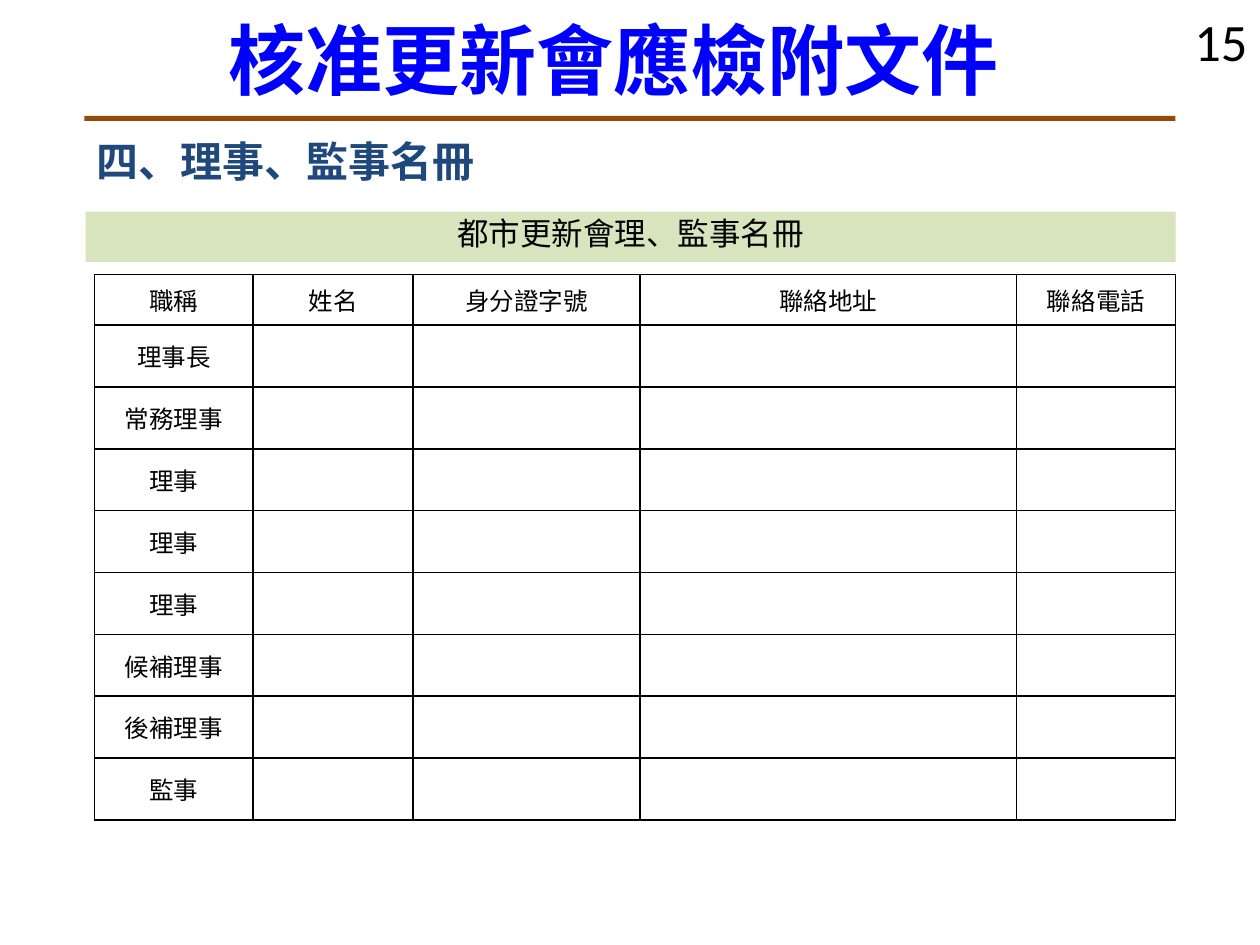
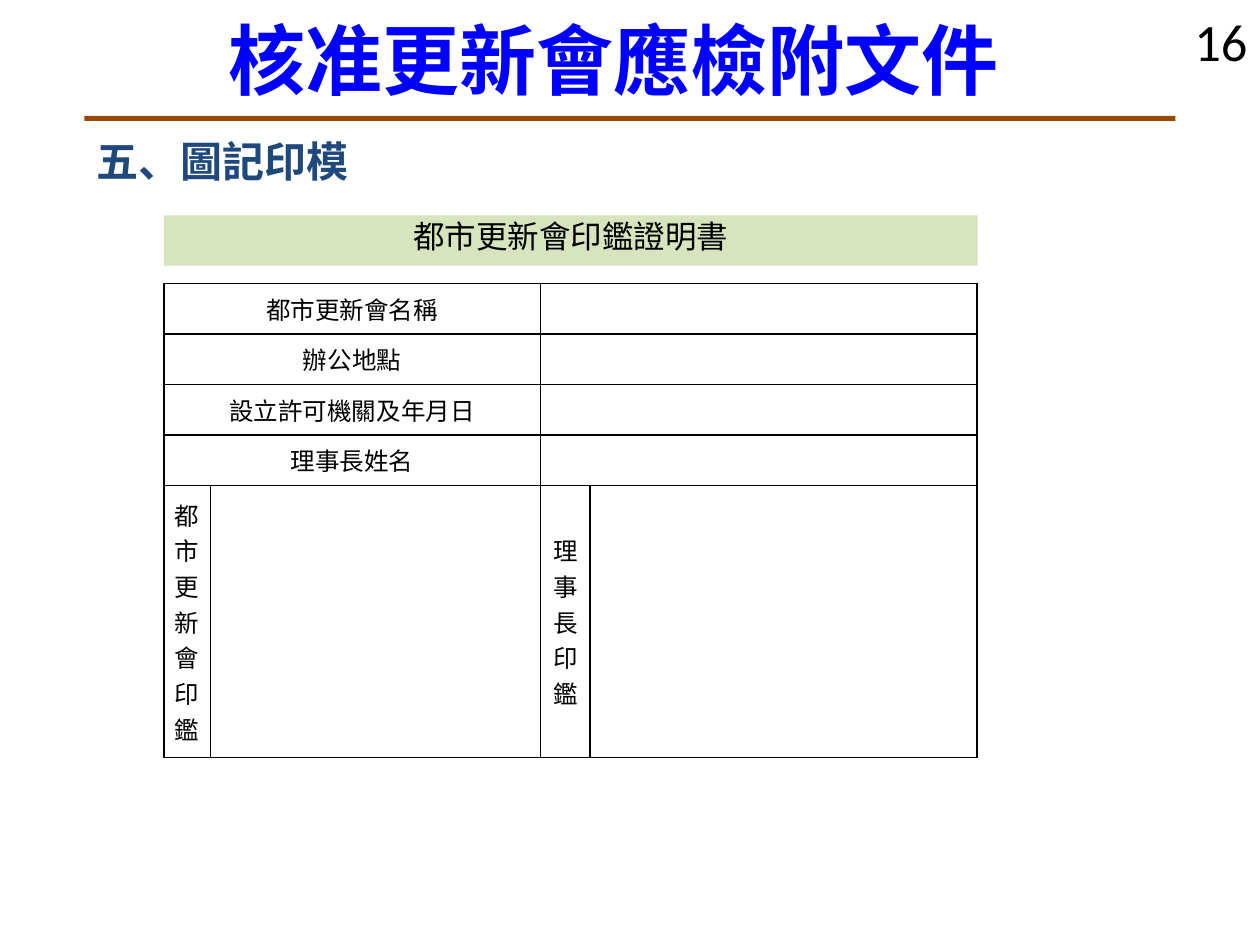
import pptx
import pptx.util
import pptx.dml.color
import pptx.enum.shapes
import pptx.enum.text
import pptx.oxml.ns
from lxml import etree

RGB = pptx.dml.color.RGBColor
BLACK = RGB(0x00, 0x00, 0x00)
BLUE = RGB(0x00, 0x00, 0xFF)
NAVY = RGB(0x1F, 0x49, 0x7D)
BROWN = RGB(0x98, 0x48, 0x07)
GREEN = RGB(0xD7, 0xE4, 0xBD)
HAN = "Noto Sans CJK SC"
LATIN = "Calibri"
TITLE = "核准更新會應檢附文件"

ALIGN = pptx.enum.text.PP_ALIGN
ANCHOR = pptx.enum.text.MSO_ANCHOR
RECT = pptx.enum.shapes.MSO_SHAPE.RECTANGLE
qn = pptx.oxml.ns.qn

# The slide is a grid of 100 columns by 75 rows
COLS, ROWS = 100, 75
deck = pptx.Presentation()
deck.slide_width = pptx.util.Inches(10)
deck.slide_height = pptx.util.Inches(7.5)


def wide(cols):
    return round(deck.slide_width * cols / COLS)


def high(rows):
    return round(deck.slide_height * rows / ROWS)


def place(box):
    left, top, width, height = box
    return wide(left), high(top), wide(width), high(height)


def style(frame, size, color, align, font=HAN, bold=False, space=0.9):
    for para in frame.paragraphs:
        para.alignment = align
        para.line_spacing = space
        for run in para.runs:
            run.font.size = pptx.util.Pt(size)
            run.font.bold = bold
            run.font.color.rgb = color
            run.font.name = font
            east = etree.SubElement(run.font._element, qn("a:ea"))
            east.set("typeface", font)


def label(slide, box, text, size, color, align, wrap=True, **look):
    frame = slide.shapes.add_textbox(*place(box)).text_frame
    frame.word_wrap = wrap
    frame.text = text
    style(frame, size, color, align, **look)


def block(slide, box, color):
    shape = slide.shapes.add_shape(RECT, *place(box))
    shape.shadow.inherit = False
    shape.fill.solid()
    shape.fill.fore_color.rgb = color
    shape.line.fill.background()
    return shape


def border(cell):
    props = cell._tc.get_or_add_tcPr()
    for spot, side in enumerate(("lnL", "lnR", "lnT", "lnB")):
        line = etree.Element(qn("a:" + side), w=str(pptx.util.Pt(1)))
        fill = etree.SubElement(line, qn("a:solidFill"))
        etree.SubElement(fill, qn("a:srgbClr"), val=str(BLACK))
        props.insert(spot, line)


# Page number, rule, title and heading
def page(number, heading):
    slide = deck.slides.add_slide(deck.slide_layouts[6])
    label(slide, (76.7, 0.2, 23.3, 4), str(number), 30, BLACK, ALIGN.RIGHT,
          font=LATIN, space=1)
    block(slide, (6.7, 9.2, 86.6, 0.4), BROWN)
    label(slide, (16.9, 1.3, 63.7, 8.4), TITLE, 44, BLUE, ALIGN.CENTER,
          wrap=False, bold=True)
    label(slide, (6.7, 10.7, 84.3, 9.1), heading, 24, NAVY, ALIGN.LEFT, bold=True)
    return slide


# Green band above a form
def banner(slide, box, text):
    frame = block(slide, box, GREEN).text_frame
    frame.vertical_anchor = ANCHOR.TOP
    frame.text = text
    style(frame, 18, BLACK, ALIGN.CENTER)


# Bordered grid whose columns and rows are given in grid units
def form(slide, left, top, cols, rows):
    box = (left, top, sum(cols), sum(rows))
    grid = slide.shapes.add_table(len(rows), len(cols), *place(box)).table
    grid.first_row = grid.horz_banding = False
    for col, width in zip(grid.columns, cols):
        col.width = wide(width)
    for row, height in zip(grid.rows, rows):
        row.height = high(height)
    for cell in grid.iter_cells():
        cell.fill.background()
        border(cell)
        cell.margin_left = cell.margin_right = wide(0.5)
        cell.margin_top = cell.margin_bottom = high(0.3)
    return grid


def write(cell, text):
    cell.text = text
    cell.vertical_anchor = ANCHOR.MIDDLE
    style(cell.text_frame, 14, BLACK, ALIGN.CENTER, space=1)


def roster():
    slide = page(15, "四、理事、監事名冊")
    banner(slide, (6.8, 16.8, 86.5, 4), "都市更新會理、監事名冊")
    heads = ("職稱", "姓名", "身分證字號", "聯絡地址", "聯絡電話")
    posts = ("理事長", "常務理事", "理事", "理事", "理事",
             "候補理事", "後補理事", "監事")
    grid = form(slide, 7.5, 21.8, (12.6, 12.7, 18, 29.9, 12.6),
                [4] + [4.91] * len(posts))
    for col, head in enumerate(heads):
        write(grid.cell(0, col), head)
    for row, post in enumerate(posts, 1):
        write(grid.cell(row, 0), post)


def seals():
    slide = page(16, "五、圖記印模")
    banner(slide, (13, 17.1, 64.6, 4), "都市更新會印鑑證明書")
    items = ("都市更新會名稱", "辦公地點", "設立許可機關及年月日", "理事長姓名")
    last = len(items)
    grid = form(slide, 13, 22.5, (3.7, 26.2, 3.95, 30.7), [4.01] * last + [21.6])
    for row, item in enumerate(items):
        for col in (0, 2):
            grid.cell(row, col).merge(grid.cell(row, col + 1))
        write(grid.cell(row, 0), item)
    # Seal names run downwards, one character a line
    for col, name in ((0, "都市更新會印鑑"), (2, "理事長印鑑")):
        write(grid.cell(last, col), "\n".join(name))


if __name__ == "__main__":
    roster()
    seals()
    deck.save("out.pptx")
